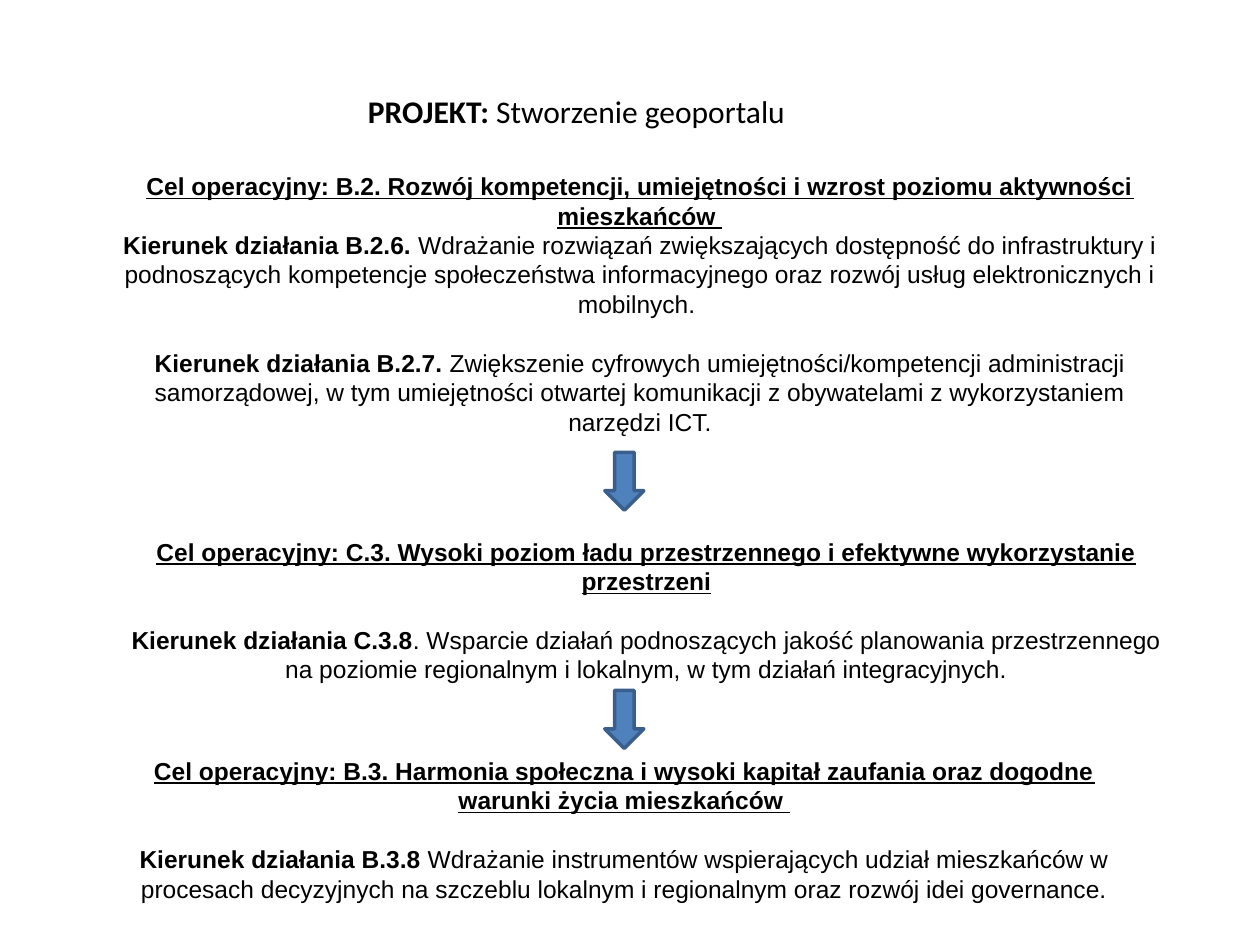
from pptx import Presentation
from pptx.dml.color import RGBColor
from pptx.enum.shapes import MSO_SHAPE
from pptx.enum.text import MSO_ANCHOR, MSO_AUTO_SIZE, PP_ALIGN
from pptx.util import Inches, Pt

COLORS = {"text": "000000", "arrow": "4F81BD", "edge": "3A5F8C"}
GAP = 16.8  # points, one line of body text

TITLE = ("PROJEKT:", " Stworzenie geoportalu")

# Each goal: box, heading, then (label, description, space before)
GOALS = [
    ((0.83, 1.31, 8.5, 2.46),
     "Cel operacyjny: B.2. Rozwój kompetencji, umiejętności i wzrost poziomu "
     "aktywności mieszkańców ",
     [("Kierunek działania B.2.6. ",
       "Wdrażanie rozwiązań zwiększających dostępność do infrastruktury i "
       "podnoszących kompetencje społeczeństwa informacyjnego oraz rozwój "
       "usług elektronicznych i mobilnych. ", 0),
      ("Kierunek działania B.2.7. ",
       "Zwiększenie cyfrowych umiejętności/kompetencji administracji "
       "samorządowej, w tym umiejętności otwartej komunikacji z obywatelami "
       "z wykorzystaniem narzędzi ICT.", GAP)]),
    ((0.84, 4.21, 8.58, 1.28),
     "Cel operacyjny: C.3. Wysoki poziom ładu przestrzennego i efektywne "
     "wykorzystanie przestrzeni",
     [("Kierunek działania C.3.8",
       ". Wsparcie działań podnoszących jakość planowania przestrzennego na "
       "poziomie regionalnym i lokalnym, w tym działań integracyjnych.", GAP)]),
    ((0.82, 5.95, 8.27, 1.28),
     "Cel operacyjny: B.3. Harmonia społeczna i wysoki kapitał zaufania oraz "
     "dogodne warunki życia mieszkańców ",
     [("Kierunek działania B.3.8 ",
       "Wdrażanie instrumentów wspierających udział mieszkańców w procesach "
       "decyzyjnych na szczeblu lokalnym i regionalnym oraz rozwój idei "
       "governance.", GAP)]),
]
ARROW_TOPS = (3.59, 5.48)


def color(name):
    return RGBColor.from_string(COLORS[name])


def add_run(para, text, font="Arial", size=14, bold=False, underline=False):
    run = para.add_run()
    run.text = text
    run.font.name = font
    run.font.size = Pt(size)
    run.font.bold = bold
    run.font.underline = underline
    run.font.color.rgb = color("text")


def set_frame(frame):
    frame.word_wrap = True
    frame.auto_size = MSO_AUTO_SIZE.NONE
    frame.vertical_anchor = MSO_ANCHOR.TOP


def add_title(slide):
    title = slide.shapes.title
    title.left, title.top, title.width, title.height = map(
        Inches, (2.82, 0.68, 4.72, 0.4))
    set_frame(title.text_frame)
    para = title.text_frame.paragraphs[0]
    para.alignment = PP_ALIGN.LEFT
    for text, bold in zip(TITLE, (True, False)):
        add_run(para, text, font="Calibri", size=18, bold=bold)


def add_goal(slide, box, heading, actions):
    frame = slide.shapes.add_textbox(*map(Inches, box)).text_frame
    set_frame(frame)
    para = frame.paragraphs[0]
    para.alignment = PP_ALIGN.CENTER
    add_run(para, heading, bold=True, underline=True)
    for label, detail, space in actions:
        para = frame.add_paragraph()
        para.alignment = PP_ALIGN.CENTER
        para.space_before = Pt(space)
        add_run(para, label, bold=True)
        add_run(para, detail)


def add_arrow(slide, top):
    arrow = slide.shapes.add_shape(
        MSO_SHAPE.DOWN_ARROW, *map(Inches, (4.8, top, 0.31, 0.46)))
    arrow.shadow.inherit = False
    arrow.fill.solid()
    arrow.fill.fore_color.rgb = color("arrow")
    arrow.line.color.rgb = color("edge")
    arrow.line.width = Pt(2)


def main():
    prs = Presentation()
    prs.slide_width, prs.slide_height = Inches(10), Inches(7.5)
    slide = prs.slides.add_slide(prs.slide_layouts[5])
    add_title(slide)
    for goal in GOALS:
        add_goal(slide, *goal)
    for top in ARROW_TOPS:
        add_arrow(slide, top)
    prs.save("out.pptx")


if __name__ == "__main__":
    main()
